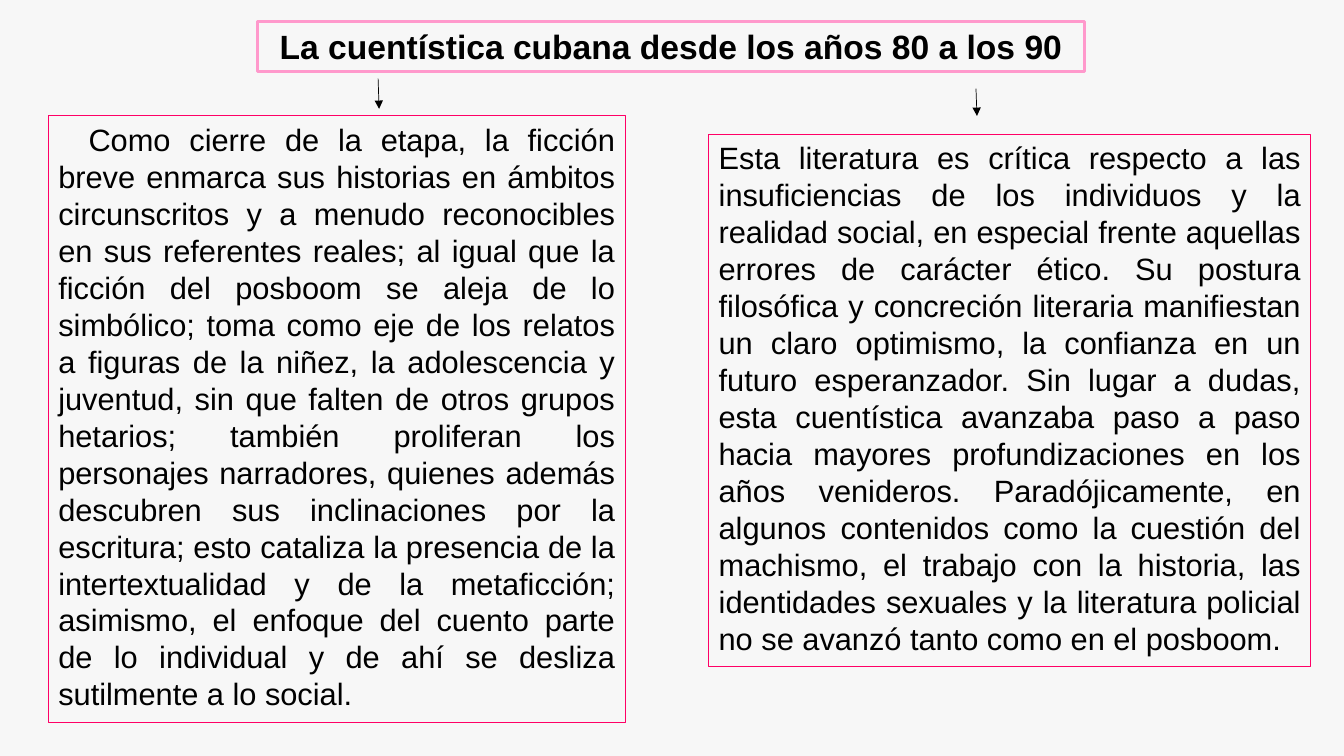
from lxml import etree
from pptx import Presentation
from pptx.dml.color import RGBColor
from pptx.enum.shapes import MSO_CONNECTOR as CONN, MSO_SHAPE as SHAPE
from pptx.enum.text import MSO_ANCHOR as ANCHOR, MSO_AUTO_SIZE as AUTO, PP_ALIGN as ALIGN
from pptx.oxml.ns import qn
from pptx.util import Inches, Pt

TITLE = "La cuentística cubana desde los años 80 a los 90"
FICTION = (
    "Como cierre de la etapa, la ficción breve enmarca sus historias en ámbitos "
    "circunscritos y a menudo reconocibles en sus referentes reales; al igual que la "
    "ficción del posboom se aleja de lo simbólico; toma como eje de los relatos a "
    "figuras de la niñez, la adolescencia y juventud, sin que falten de otros grupos "
    "hetarios; también proliferan los personajes narradores, quienes además descubren "
    "sus inclinaciones por la escritura; esto cataliza la presencia de la "
    "intertextualidad y de la metaficción; asimismo, el enfoque del cuento parte de lo "
    "individual y de ahí se desliza sutilmente a lo social."
)
CRITIQUE = (
    "Esta literatura es crítica respecto a las insuficiencias de los individuos y la "
    "realidad social, en especial frente aquellas errores de carácter ético. Su postura "
    "filosófica y concreción literaria manifiestan un claro optimismo, la confianza en "
    "un futuro esperanzador. Sin lugar a dudas, esta cuentística avanzaba paso a paso "
    "hacia mayores profundizaciones en los años venideros. Paradójicamente, en algunos "
    "contenidos como la cuestión del machismo, el trabajo con la historia, las "
    "identidades sexuales y la literatura policial no se avanzó tanto como en el posboom."
)


def color(value):
    return RGBColor.from_string(value)


def add_box(s, pos, text, border, width, size, align, bold=False, indent=0):
    sp = s.shapes.add_shape(SHAPE.RECTANGLE, *map(Inches, pos))
    sp.shadow.inherit = False
    sp.fill.background()
    sp.line.color.rgb = color(border)
    sp.line.width = Pt(width)
    tf = sp.text_frame
    tf.word_wrap = True
    tf.auto_size = AUTO.SHAPE_TO_FIT_TEXT
    tf.vertical_anchor = ANCHOR.TOP
    p = tf.paragraphs[0]
    p.alignment = align
    p.line_spacing = Pt(size * 1.2)
    if indent:
        p._p.get_or_add_pPr().set("indent", str(Inches(indent)))
    r = p.add_run()
    r.text = text
    r.font.name = "Arial"
    r.font.size = Pt(size)
    r.font.bold = bold
    r.font.color.rgb = color("000000")


def add_arrow(s, x1, y1, x2, y2):
    cn = s.shapes.add_connector(CONN.STRAIGHT, *map(Inches, (x1, y1, x2, y2)))
    cn.line.color.rgb = color("000000")
    cn.line.width = Pt(0.5)
    etree.SubElement(cn.line._get_or_add_ln(), qn("a:tailEnd"), type="triangle")
    etree.SubElement(cn._element.spPr, qn("a:effectLst"))


def main():
    prs = Presentation()
    prs.slide_width, prs.slide_height = Inches(13.33), Inches(7.5)
    s = prs.slides.add_slide(prs.slide_layouts[6])
    s.background.fill.solid()
    s.background.fill.fore_color.rgb = color("F7F7F7")

    add_box(s, (2.55, 0.21, 8.21, 0.5), TITLE, "FF99CC", 2.25, 24, ALIGN.CENTER, bold=True)
    add_box(s, (0.48, 1.15, 5.72, 6.02), FICTION, "FF0066", 0.75, 22, ALIGN.JUSTIFY, indent=0.3)
    add_box(s, (7.03, 1.33, 5.97, 5.28), CRITIQUE, "FF0066", 0.75, 22, ALIGN.JUSTIFY)
    add_arrow(s, 9.68, 0.88, 9.69, 1.15)
    add_arrow(s, 3.75, 0.78, 3.76, 1.08)

    prs.save("out.pptx")


if __name__ == "__main__":
    main()
